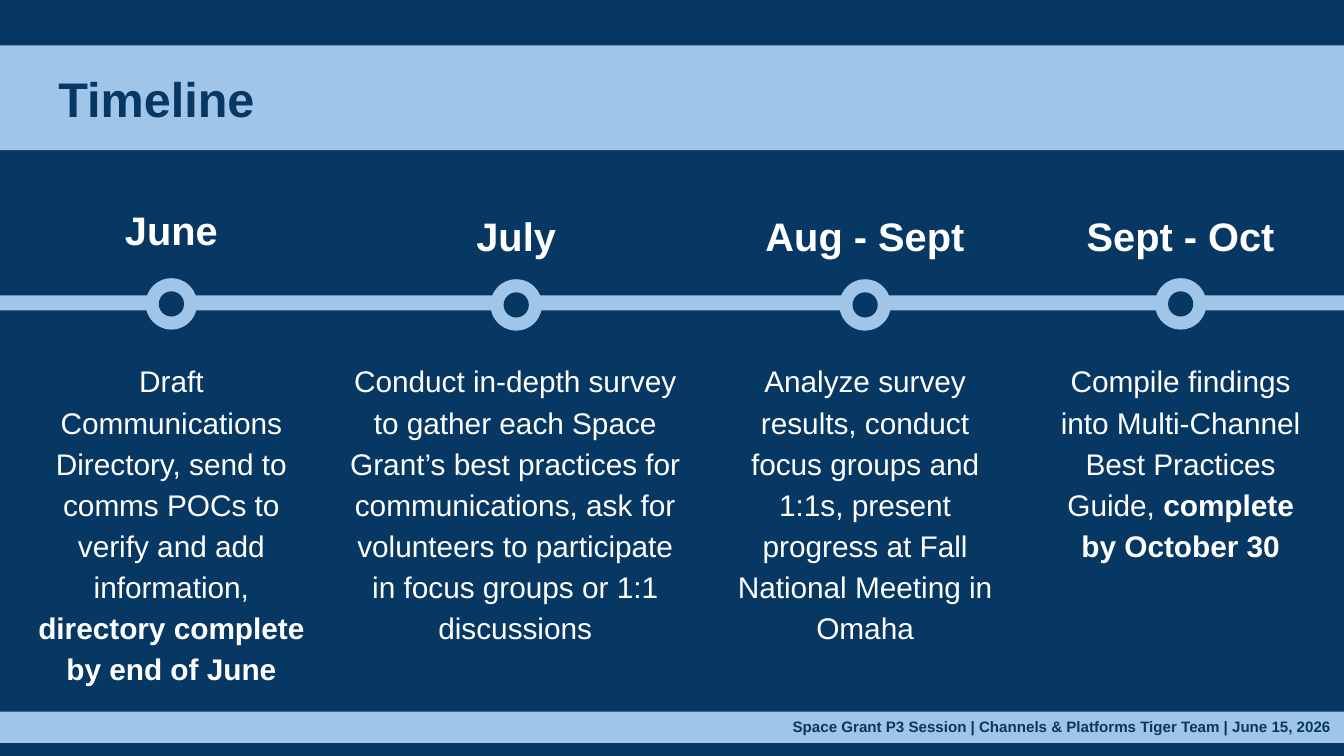
import pptx
import pptx.util
import pptx.dml.color
import pptx.enum.shapes
import pptx.enum.text

Inches, Pt = pptx.util.Inches, pptx.util.Pt
Align = pptx.enum.text.PP_ALIGN
Kind = pptx.enum.shapes.MSO_SHAPE

NAVY, SKY, WHITE = "073763", "9FC5E8", "FFFFFF"


def color(code):
    return pptx.dml.color.RGBColor.from_string(code)


class Deck:
    font = "Arial"
    inset = Inches(0.13)

    def __init__(self):
        self.show = pptx.Presentation()
        self.show.slide_width = Inches(13.33)
        self.show.slide_height = Inches(7.5)
        self.slide = self.show.slides.add_slide(self.show.slide_layouts[5])
        fill = self.slide.background.fill
        fill.solid()
        fill.fore_color.rgb = color(NAVY)

    def shape(self, kind, left, top, width, height, fill, home=None):
        item = (home or self.slide).shapes.add_shape(
            kind, Inches(left), Inches(top), Inches(width), Inches(height))
        item.shadow.inherit = False
        item.fill.solid()
        item.fill.fore_color.rgb = color(fill)
        item.line.fill.background()
        return item

    def band(self, top, height):
        return self.shape(Kind.RECTANGLE, 0, top, 13.33, height, SKY)

    def ring(self, mid, top):
        group = self.slide.shapes.add_group_shape()
        for size, fill in ((0.51, SKY), (0.25, NAVY)):
            self.shape(Kind.OVAL, mid - size / 2, top + (0.51 - size) / 2,
                       size, size, fill, group)

    def fill_text(self, box, runs, size, fill, align, bold=None):
        frame = box.text_frame
        frame.word_wrap = True
        frame.auto_size = pptx.enum.text.MSO_AUTO_SIZE.NONE
        frame.vertical_anchor = pptx.enum.text.MSO_ANCHOR.TOP
        frame.margin_left = frame.margin_right = self.inset
        frame.margin_top = frame.margin_bottom = self.inset
        para = frame.paragraphs[0]
        para.alignment = align
        para.font.name = self.font
        para.font.size = Pt(size)
        para.font.color.rgb = color(fill)
        para.font.bold = bold
        for text, strong in runs:
            run = para.add_run()
            run.text = text
            if strong:
                run.font.bold = True
        return para

    def title(self, text, band):
        box = self.slide.shapes.title
        box.left, box.top = Inches(0.45), Inches(0.55)
        box.width, box.height = Inches(12.42), Inches(0.97)
        self.fill_text(box, [(text, False)], 34.7, NAVY, Align.LEFT, True)
        band.element.addnext(box.element)  # bring the title above its band

    def text(self, left, top, width, height, runs, size,
             fill=WHITE, align=Align.CENTER, bold=None):
        box = self.slide.shapes.add_textbox(
            Inches(left), Inches(top), Inches(width), Inches(height))
        return self.fill_text(box, runs, size, fill, align, bold)


# month, centre, label top, label width, ring top, text left, text width, runs
STEPS = [
    ("June", 1.7, 1.84, 1.52, 2.76, 0.18, 3.04,
     [("Draft Communications Directory, send to comms POCs to verify and "
       "add information, ", False),
      ("directory complete by end of June", True)]),
    ("July", 5.12, 1.9, 1.18, 2.77, 3.34, 3.54,
     [("Conduct in-depth survey to gather each Space Grant’s best practices "
       "for communications, ask for volunteers to participate in focus "
       "groups or 1:1 discussions", False)]),
    ("Aug - Sept", 8.58, 1.9, 2.44, 2.77, 7.14, 2.88,
     [("Analyze survey results, conduct focus groups and 1:1s, present "
       "progress at Fall National Meeting in Omaha", False)]),
    ("Sept - Oct", 11.71, 1.9, 2.44, 2.76, 10.31, 2.8,
     [("Compile findings into Multi-Channel Best Practices Guide, ", False),
      ("complete by October 30", True)]),
]


def main():
    deck = Deck()

    # Heading
    deck.title("Timeline", deck.band(0.45, 1.04))

    # Timeline bar and its steps
    deck.band(2.93, 0.15)
    for month, mid, top, wide, ring, left, width, runs in STEPS:
        label = deck.text(mid - wide / 2, top, wide, 0.87,
                          [(month, False)], 28.4, bold=True)
        label.line_spacing = 1.15
        deck.ring(mid, ring)
        deck.text(left, 3.42, width, 3.6, runs, 21.3).line_spacing = 1.15

    # Footer
    deck.band(7.06, 0.31)
    deck.text(7.64, 6.99, 5.69, 0.31,
              [("Space Grant P3 Session | Channels & Platforms Tiger Team | "
                "June 15, 2026", False)],
              10.8, NAVY, Align.RIGHT, True)

    deck.show.save("out.pptx")


if __name__ == "__main__":
    main()
